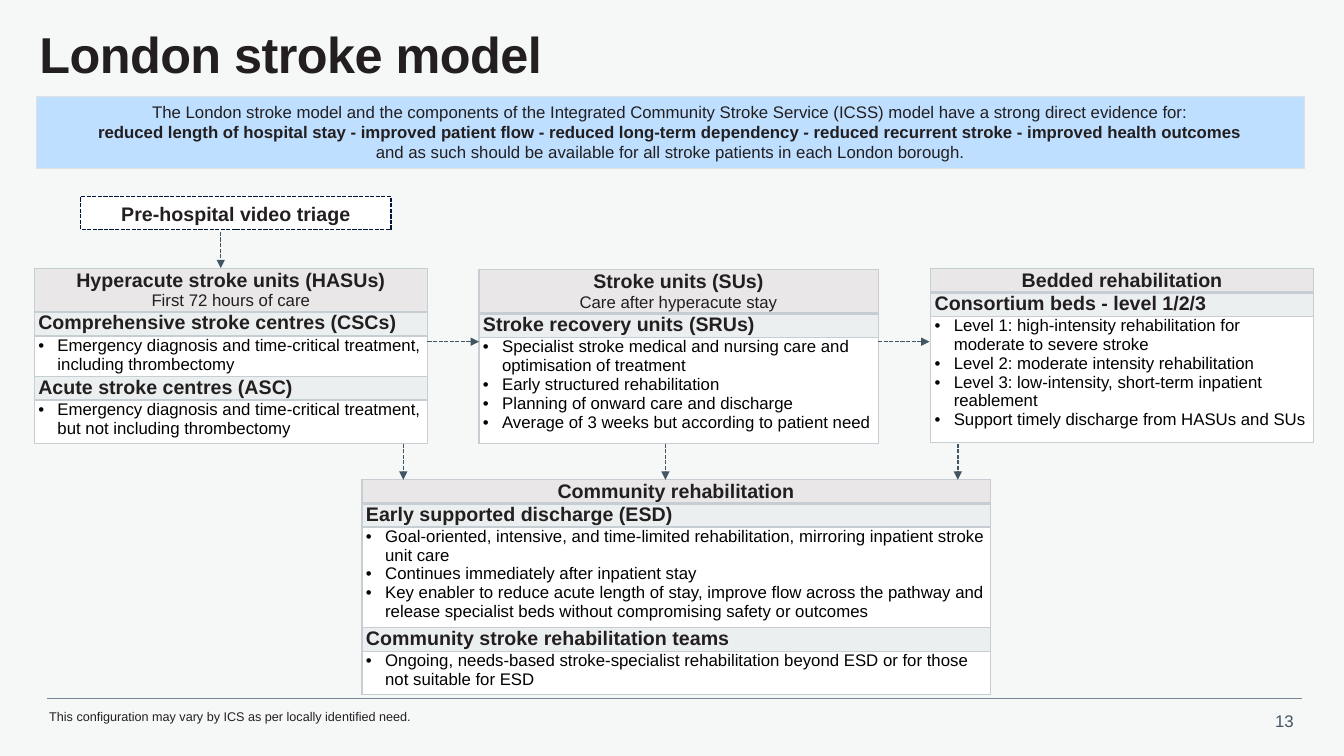
from lxml.etree import SubElement
from pptx import Presentation
from pptx.dml.color import RGBColor
from pptx.enum.dml import MSO_LINE
from pptx.enum.shapes import MSO_CONNECTOR, MSO_SHAPE
from pptx.enum.text import MSO_ANCHOR as Anchor, MSO_AUTO_SIZE as AutoSize, PP_ALIGN as Align
from pptx.oxml.ns import qn
from pptx.util import Inches, Pt

COLORS = {
    "background": "F6F8F8", "ink": "231F20", "black": "000000", "white": "FFFFFF",
    "slate": "425563", "rule": "768692", "navy": "00153B", "banner": "BEDFFF",
    "banner_line": "DDE1E4", "header": "EAE7E8", "border": "C7CED3",
}
FONT = "Arial"
TITLE = "London stroke model"
BANNER = [
    ("The London stroke model and the components of the Integrated Community Stroke Service "
     "(ICSS) model have a strong direct evidence for:", 12, False),
    ("reduced length of hospital stay - improved patient flow - reduced long-term dependency - "
     "reduced recurrent stroke - improved health outcomes", 12, True),
    ("and as such should be available for all stroke patients in each London borough.", 12, False),
]
TRIAGE = "Pre-hospital video triage"
FOOTNOTE = "This configuration may vary by ICS as per locally identified need."
PAGE_NUMBER = "13"

# Each unit: frame (left, top, width, height), row heights, header lines, (heading, bullets) sections
UNITS = [
    ((0.34, 2.66, 3.9, 1.73), [0.35, 0.24, 0.26, 0.16, 0.43],
     ["Hyperacute stroke units (HASUs)", "First 72 hours of care"],
     [("Comprehensive stroke centres (CSCs)",
       ["Emergency diagnosis and time-critical treatment, including thrombectomy"]),
      ("Acute stroke centres (ASC)",
       ["Emergency diagnosis and time-critical treatment, but not including thrombectomy"])]),
    ((4.75, 2.67, 3.96, 1.73), [0.44, 0.24, 1.05],
     ["Stroke units (SUs)", "Care after hyperacute stay"],
     [("Stroke recovery units (SRUs)",
       ["Specialist stroke medical and nursing care and optimisation of treatment",
        "Early structured rehabilitation",
        "Planning of onward care and discharge",
        "Average of 3 weeks but according to patient need"])]),
    ((3.59, 4.76, 6.23, 2.13), [0.2, 0.19, 0.8, 0.19, 0.43],
     ["Community rehabilitation"],
     [("Early supported discharge (ESD)",
       ["Goal‑oriented, intensive, and time‑limited rehabilitation, mirroring inpatient stroke "
        "unit care",
        "Continues immediately after inpatient stay",
        "Key enabler to reduce acute length of stay, improve flow across the pathway and release "
        "specialist beds without compromising safety or outcomes"]),
      ("Community stroke rehabilitation teams",
       ["Ongoing, needs‑based stroke-specialist rehabilitation beyond ESD or for those not "
        "suitable for ESD"])]),
    ((9.23, 2.66, 3.8, 1.73), [0.24, 0.24, 1.25],
     ["Bedded rehabilitation"],
     [("Consortium beds - level 1/2/3",
       ["Level 1: high‑intensity rehabilitation for moderate to severe stroke",
        "Level 2: moderate intensity rehabilitation",
        "Level 3: low-intensity, short-term inpatient reablement",
        "Support timely discharge from HASUs and SUs"])]),
]
ACROSS_ARROWS = [4.24, 8.71]
ACROSS_Y, ACROSS_LENGTH = 3.39, 0.51
DOWN_ARROWS = [(6.6, 4.4), (4, 4.4), (9.5, 4.4), (2.19, 2.3)]
DOWN_LENGTH = 0.36


def color(name):
    return RGBColor.from_string(COLORS[name])


def write(frame, lines, ink="ink", align=Align.LEFT, bullet=False):
    """Fill a text frame with (text, size, bold) lines."""
    for index, (text, size, bold) in enumerate(lines):
        paragraph = frame.paragraphs[0] if index == 0 else frame.add_paragraph()
        paragraph.alignment = align
        if bullet:
            properties = paragraph._p.get_or_add_pPr()
            properties.set("marL", str(Inches(0.19)))
            properties.set("indent", str(-Inches(0.19)))
            SubElement(properties, qn("a:buFont"), typeface=FONT)
            SubElement(properties, qn("a:buChar"), char="•")
        run = paragraph.add_run()
        run.text = text
        run.font.name, run.font.size, run.font.bold = FONT, Pt(size), bold
        run.font.color.rgb = color(ink)


def add_label(slide, frame, lines, wrap=True, **text_format):
    box = slide.shapes.add_textbox(*map(Inches, frame))
    box.text_frame.word_wrap = wrap
    box.text_frame.auto_size = AutoSize.SHAPE_TO_FIT_TEXT
    write(box.text_frame, lines, **text_format)


def add_box(slide, frame, lines, fill, line, width, anchor):
    shape = slide.shapes.add_shape(MSO_SHAPE.RECTANGLE, *map(Inches, frame))
    shape.shadow.inherit = False
    shape.fill.solid()
    shape.fill.fore_color.rgb = color(fill)
    shape.line.color.rgb = color(line)
    shape.line.width = Pt(width)
    shape.text_frame.word_wrap = True
    shape.text_frame.vertical_anchor = anchor
    write(shape.text_frame, lines, align=Align.CENTER)
    return shape


def add_line(slide, start, end, ink, width, arrow=False):
    connector = slide.shapes.add_connector(
        MSO_CONNECTOR.STRAIGHT, *map(Inches, (*start, *end)))
    connector.line.color.rgb = color(ink)
    connector.line.width = Pt(width)
    if arrow:
        connector.line.dash_style = MSO_LINE.SQUARE_DOT
        SubElement(connector.line._get_or_add_ln(), qn("a:tailEnd"), type="triangle")
    SubElement(connector._element.spPr, qn("a:effectLst"))


def style_cell(cell, fill, bottom=1, alpha=None):
    cell.margin_left = cell.margin_right = Inches(0.04)
    cell.margin_top = cell.margin_bottom = 0
    properties = cell._tc.get_or_add_tcPr()
    for side, width in (("L", 1), ("R", 1), ("T", 1), ("B", bottom)):
        border = SubElement(properties, qn(f"a:ln{side}"), w=str(Pt(width)))
        solid = SubElement(border, qn("a:solidFill"))
        SubElement(solid, qn("a:srgbClr"), val=COLORS["border"])
    cell.fill.solid()
    cell.fill.fore_color.rgb = color(fill)
    if alpha:
        tint = properties.find(qn("a:solidFill")).find(qn("a:srgbClr"))
        SubElement(tint, qn("a:alpha"), val=str(alpha * 1000))


def add_unit(slide, frame, heights, header, sections):
    graphic = slide.shapes.add_table(len(heights), 1, *map(Inches, frame))
    table = graphic.table
    table.first_row = table.horz_banding = False
    for row, height in zip(table.rows, heights):
        row.height = Inches(height)
    graphic.height = Inches(frame[3])

    top = table.cell(0, 0)
    style_cell(top, "header", bottom=2)
    top.vertical_anchor = Anchor.MIDDLE
    lines = [(header[0], 14, True)] + [(text, 12, False) for text in header[1:]]
    write(top.text_frame, lines, align=Align.CENTER)
    for index, (heading, bullets) in enumerate(sections):
        heading_cell = table.cell(2 * index + 1, 0)
        style_cell(heading_cell, "border", alpha=20)
        write(heading_cell.text_frame, [(heading, 14, True)])
        body = table.cell(2 * index + 2, 0)
        style_cell(body, "white")
        write(body.text_frame, [(text, 12, False) for text in bullets],
              ink="black", bullet=True)


def add_title(slide):
    title = slide.shapes.title
    title.left, title.top, title.width, title.height = map(Inches, (0.39, 0.17, 8.62, 0.8))
    frame = title.text_frame
    frame.margin_left = frame.margin_right = frame.margin_top = frame.margin_bottom = 0
    frame.vertical_anchor = Anchor.MIDDLE
    frame.auto_size = AutoSize.NONE
    frame.word_wrap = True
    write(frame, [(TITLE, 36, True)])
    paragraph = frame.paragraphs[0]
    paragraph.line_spacing = 0.9
    paragraph.runs[0].font._element.set("spc", "-40")


def main():
    presentation = Presentation()
    presentation.slide_width, presentation.slide_height = Inches(13.33), Inches(7.5)
    slide = presentation.slides.add_slide(presentation.slide_layouts[5])
    slide.background.fill.solid()
    slide.background.fill.fore_color.rgb = color("background")

    add_label(slide, (12.52, 7, 0.41, 0.3), [(PAGE_NUMBER, 12, False)],
              wrap=False, ink="slate", align=Align.RIGHT)
    add_line(slide, (0.47, 6.93), (12.91, 6.93), "rule", 0.5)
    add_title(slide)
    for unit in UNITS:
        add_unit(slide, *unit)
    add_box(slide, (0.36, 0.96, 12.58, 0.71), BANNER, "banner", "banner_line", 0.75, Anchor.TOP)
    triage = add_box(slide, (0.8, 1.95, 3.08, 0.33), [(TRIAGE, 14, True)],
                     "white", "navy", 1, Anchor.MIDDLE)
    triage.line.dash_style = MSO_LINE.SQUARE_DOT
    for x in ACROSS_ARROWS:
        add_line(slide, (x, ACROSS_Y), (x + ACROSS_LENGTH, ACROSS_Y), "slate", 1, arrow=True)
    for x, y in DOWN_ARROWS:
        add_line(slide, (x, y), (x, y + DOWN_LENGTH), "slate", 1, arrow=True)
    add_label(slide, (0.39, 6.98, 4.04, 0.25), [(FOOTNOTE, 9, False)])
    presentation.save("out.pptx")


if __name__ == "__main__":
    main()
